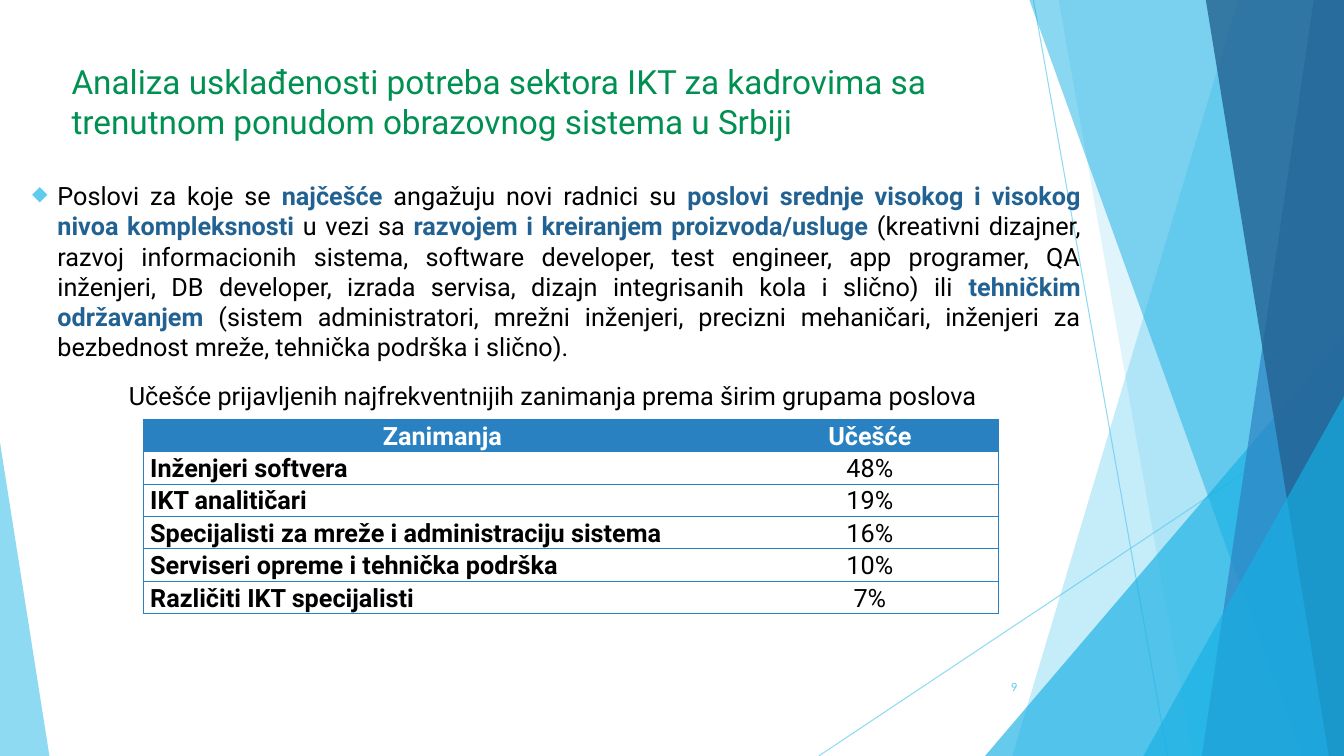
from lxml import etree
from pptx import Presentation
from pptx.dml.color import RGBColor
from pptx.enum.shapes import MSO_CONNECTOR
from pptx.enum.text import MSO_ANCHOR, PP_ALIGN
from pptx.oxml.ns import qn
from pptx.util import Inches, Pt

LEFT, MID, RIGHT, FULL = PP_ALIGN.LEFT, PP_ALIGN.CENTER, PP_ALIGN.RIGHT, PP_ALIGN.JUSTIFY
TOP, CENTER = MSO_ANCHOR.TOP, MSO_ANCHOR.MIDDLE
COLS, ROWS = 13.33, 7.5
SKY, CYAN, BLUE, NAVY = "5FCBEF", "17B0E4", "2E83C3", "236292"
GRID, BLACK, WHITE, GREEN, ACCENT = "2981C2", "000000", "FFFFFF", "009051", "226292"

RAYS = [((10.25, 0), (11.58, ROWS)), ((COLS, 4.03), (8.12, ROWS))]
BANDS = [
    (12.28, 0, 10.04, COLS, SKY, 36),
    (10.5, 0, 11.83, COLS, SKY, 20),
    (COLS, 3.33, 9.77, COLS, CYAN, 66),
    (10.21, 0, 12.91, COLS, CYAN, 50),
    (13.03, 0, 11.92, COLS, BLUE, 70),
    (11.96, 0, 13.18, COLS, NAVY, 80),
    (COLS, 3.93, 11.34, COLS, CYAN, 66),
    (0, 4.39, 0.49, 0, SKY, 70),
]
TITLE = ("Analiza usklađenosti potreba sektora IKT za kadrovima sa "
         "trenutnom ponudom obrazovnog sistema u Srbiji")
BODY = [
    "Poslovi za koje se ", "najčešće ", "angažuju novi radnici su ",
    "poslovi srednje visokog i visokog nivoa kompleksnosti", " u vezi sa ",
    "razvojem i kreiranjem proizvoda/usluge",
    " (kreativni dizajner, razvoj informacionih sistema, software developer, "
    "test engineer, app programer, QA inženjeri, DB developer, izrada servisa, "
    "dizajn integrisanih kola i slično) ili ",
    "tehničkim održavanjem ",
    "(sistem administratori, mrežni inženjeri, precizni mehaničari, inženjeri za "
    "bezbednost mreže, tehnička podrška i slično).",
]
CAPTION = "Učešće prijavljenih najfrekventnijih zanimanja prema širim grupama poslova"
JOBS = [
    ("Zanimanja", "Učešće"),
    ("Inženjeri softvera", "48%"),
    ("IKT analitičari", "19%"),
    ("Specijalisti za mreže i administraciju sistema", "16%"),
    ("Serviseri opreme i tehnička podrška", "10%"),
    ("Različiti IKT specijalisti", "7%"),
]


def color(code):
    return RGBColor.from_string(code)


def node(parent, tag, **attrs):
    item = etree.SubElement(parent, qn(tag))
    for key, value in attrs.items():
        item.set(key, str(value))
    return item


def fade(part, share):
    for tint in part.iter(qn("a:srgbClr")):
        node(tint, "a:alpha", val=share * 1000)


def style(font, size, code, bold=False, face="Roboto"):
    font.name, font.size, font.bold = face, Pt(size), bold
    font.color.rgb = color(code)


def draw_decor(slide, box):
    left, top, width, height = box

    def spot(x, y):
        return Inches(left + x * width / COLS), Inches(top + y * height / ROWS)

    for start, end in RAYS:
        ray = slide.shapes.add_connector(MSO_CONNECTOR.STRAIGHT, *spot(*start), *spot(*end))
        ray.line.color.rgb, ray.line.width = color(SKY), Pt(0.75)
        props = ray._element.spPr
        fade(props, 70)
        node(props, "a:effectLst")
    for head, rise, foot, side, code, share in BANDS:
        path = slide.shapes.build_freeform(*spot(head, rise))
        path.add_line_segments([spot(side, rise), spot(side, ROWS), spot(foot, ROWS)])
        band = path.convert_to_shape()
        band.shadow.inherit = False
        band.fill.solid()
        band.fill.fore_color.rgb = color(code)
        fade(band._element.spPr, share)
        band.line.fill.background()


def add_text(slide, box, inset=0.05, wrap=True, anchor=TOP):
    frame = slide.shapes.add_textbox(*map(Inches, box)).text_frame
    frame.word_wrap, frame.vertical_anchor = wrap, anchor
    frame.margin_left = frame.margin_right = Inches(inset)
    frame.margin_top = frame.margin_bottom = Inches(0.05)
    return frame.paragraphs[0]


def draw_label(slide, box, text, size, code, align=LEFT, face="Roboto", **frame):
    para = add_text(slide, box, **frame)
    para.text, para.alignment = text, align
    style(para.font, size, code, face=face)


def draw_body(slide, box):
    para = add_text(slide, box)
    para.alignment, para.space_before = FULL, Pt(12)
    props = para._p.get_or_add_pPr()
    props.set("marL", str(Inches(0.25)))
    props.set("indent", str(-Inches(0.25)))
    node(node(props, "a:buClr"), "a:srgbClr", val=SKY)
    node(props, "a:buSzPct", val=80000)
    node(props, "a:buChar", char="◆")
    para.font.name, para.font.size = "Roboto", Pt(18)
    for place, text in enumerate(BODY):
        run = para.add_run()
        run.text = text
        run.font.bold = place % 2 == 1
        run.font.color.rgb = color(ACCENT if run.font.bold else BLACK)


def set_edges(cell, first):
    props = cell._tc.get_or_add_tcPr()
    for side in "LRTB":
        edge = node(props, "a:ln" + side, w=Pt(0.75))
        if side == ("R" if first else "L"):
            node(edge, "a:noFill")
        else:
            node(node(edge, "a:solidFill"), "a:srgbClr", val=GRID)


def draw_table(slide, box):
    width, height = box[2:]
    table = slide.shapes.add_table(len(JOBS), 2, *map(Inches, box)).table
    table.first_row = table.horz_banding = False
    for column, share in zip(table.columns, (0.7, 0.3)):
        column.width = Inches(width * share)
    for r, job in enumerate(JOBS):
        table.rows[r].height = Inches(height / len(JOBS))
        for c, text in enumerate(job):
            cell = table.cell(r, c)
            set_edges(cell, c == 0)
            if r == 0:
                cell.fill.solid()
                cell.fill.fore_color.rgb = color(GRID)
            else:
                cell.fill.background()
            cell.vertical_anchor = CENTER
            cell.margin_left = cell.margin_right = Inches(0.07)
            cell.margin_top = cell.margin_bottom = 0
            para = cell.text_frame.paragraphs[0]
            para.text = text
            para.alignment = MID if r == 0 or c == 1 else LEFT
            para.line_spacing, para.space_after = 1.07, Pt(8)
            style(para.font, 18, WHITE if r == 0 else BLACK, r == 0 or c == 0)


def main():
    deck = Presentation()
    deck.slide_width, deck.slide_height = Inches(COLS), Inches(ROWS)
    slide = deck.slides.add_slide(deck.slide_layouts[6])
    draw_decor(slide, (0, 0, COLS, ROWS))
    draw_label(slide, (9.9, 6.69, 0.24, 0.24), "9", 9, SKY, RIGHT, "Calibri",
               wrap=False, anchor=CENTER)
    draw_body(slide, (0.27, 1.74, 10.5, 1.92))
    draw_label(slide, (0.66, 0.56, 9.48, 1), TITLE, 23.8, GREEN)
    draw_table(slide, (1.42, 4.16, 8.48, 1.84))
    draw_label(slide, (1.18, 3.72, 9.22, 0.4), CAPTION, 18, BLACK, inset=0.1)
    deck.save("out.pptx")


if __name__ == "__main__":
    main()
